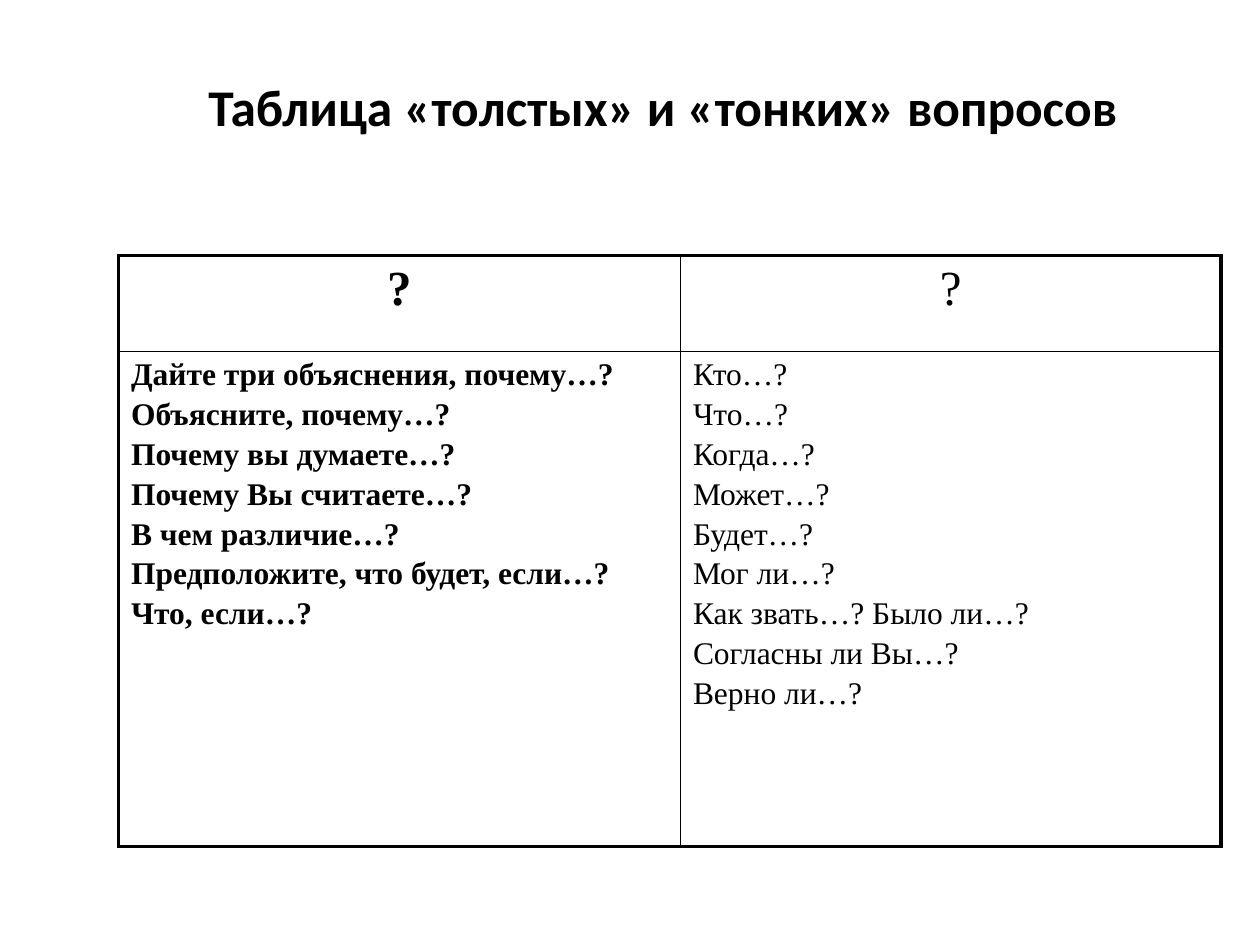
from dataclasses import dataclass

import pptx
import pptx.dml.color
import pptx.enum.text
import pptx.oxml
import pptx.oxml.ns
import pptx.util
from pptx.util import Inches


@dataclass(frozen=True)
class Theme:
    ink: str = "000000"
    title_font: str = "Calibri"
    table_font: str = "Times New Roman"
    title_size: float = 29.4
    header_size: float = 28
    body_size: float = 18
    paragraph_gap: float = 2.8
    outer_line: float = 2.25
    inner_line: float = 1


THEME = Theme()
TITLE = "Таблица «толстых» и «тонких» вопросов"
THICK_QUESTIONS = [
    "Дайте три объяснения, почему…?",
    "Объясните, почему…?",
    "Почему вы думаете…?",
    "Почему Вы считаете…?",
    "В чем различие…?",
    "Предположите, что будет, если…?",
    "Что, если…?",
]
THIN_QUESTIONS = [
    "Кто…?",
    "Что…?",
    "Когда…?",
    "Может…?",
    "Будет…?",
    "Мог ли…?",
    "Как звать…? Было ли…?",
    "Согласны ли Вы…?",
    "Верно ли…?",
]
ROWS = [(["?"], ["?"]), (THICK_QUESTIONS, THIN_QUESTIONS)]


def write_lines(text_frame, lines, font_name, size, bold, alignment):
    text_frame.text = "\n".join(lines)
    for paragraph in text_frame.paragraphs:
        paragraph.alignment = alignment
        paragraph.space_before = pptx.util.Pt(THEME.paragraph_gap)
        for run in paragraph.runs:
            run.font.name = font_name
            run.font.size = pptx.util.Pt(size)
            run.font.bold = bold
            run.font.color.rgb = pptx.dml.color.RGBColor.from_string(THEME.ink)


def add_title(slide, left, top, width, height):
    text_frame = slide.shapes.add_textbox(left, top, width, height).text_frame
    text_frame.word_wrap = True
    write_lines(text_frame, [TITLE], THEME.title_font, THEME.title_size, True,
                pptx.enum.text.PP_ALIGN.CENTER)


def set_borders(cell, widths):
    """Draw the cell's sides; widths maps L, R, T and B to points."""
    properties = cell._tc.get_or_add_tcPr()
    for position, side in enumerate("LRTB"):
        line = pptx.oxml.parse_xml(
            f'<a:ln{side} {pptx.oxml.ns.nsdecls("a")} w="{pptx.util.Pt(widths[side])}">'
            f'<a:solidFill><a:srgbClr val="{THEME.ink}"/></a:solidFill></a:ln{side}>')
        properties.insert(position, line)


def add_question_table(slide, left, top, width, height):
    table = slide.shapes.add_table(2, 2, left, top, width, height).table
    table.first_row = table.horz_banding = False
    header_height, first_width = Inches(0.76), Inches(4.46)
    table.rows[0].height, table.rows[1].height = header_height, height - header_height
    table.columns[0].width, table.columns[1].width = first_width, width - first_width

    for row, columns in enumerate(ROWS):
        is_header = row == 0
        size = THEME.header_size if is_header else THEME.body_size
        alignment = (pptx.enum.text.PP_ALIGN.CENTER if is_header
                     else pptx.enum.text.PP_ALIGN.LEFT)
        for column, lines in enumerate(columns):
            cell = table.cell(row, column)
            cell.fill.background()
            write_lines(cell.text_frame, lines, THEME.table_font, size,
                        column == 0, alignment)
            outer_sides = "LR"[column] + "TB"[row]
            set_borders(cell, {
                side: THEME.outer_line if side in outer_sides else THEME.inner_line
                for side in "LRTB"})


def main():
    presentation = pptx.Presentation()
    presentation.slide_width, presentation.slide_height = Inches(10), Inches(7.5)
    slide = presentation.slides.add_slide(presentation.slide_layouts[6])
    add_title(slide, Inches(1.25), Inches(0.55), Inches(8.03), Inches(0.71))
    add_question_table(slide, Inches(0.94), Inches(2.03), Inches(8.75), Inches(4.69))
    presentation.save("out.pptx")


if __name__ == "__main__":
    main()
